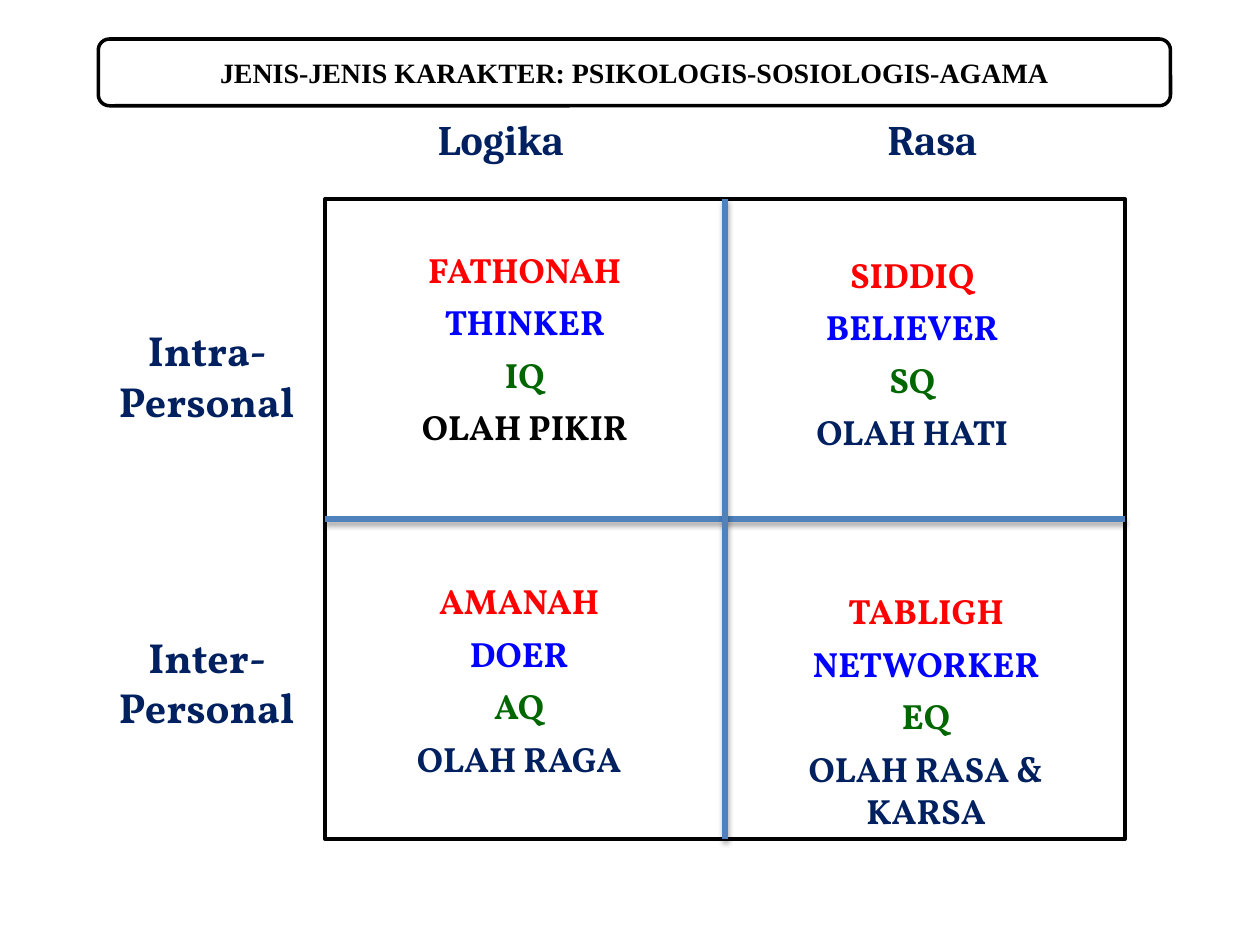
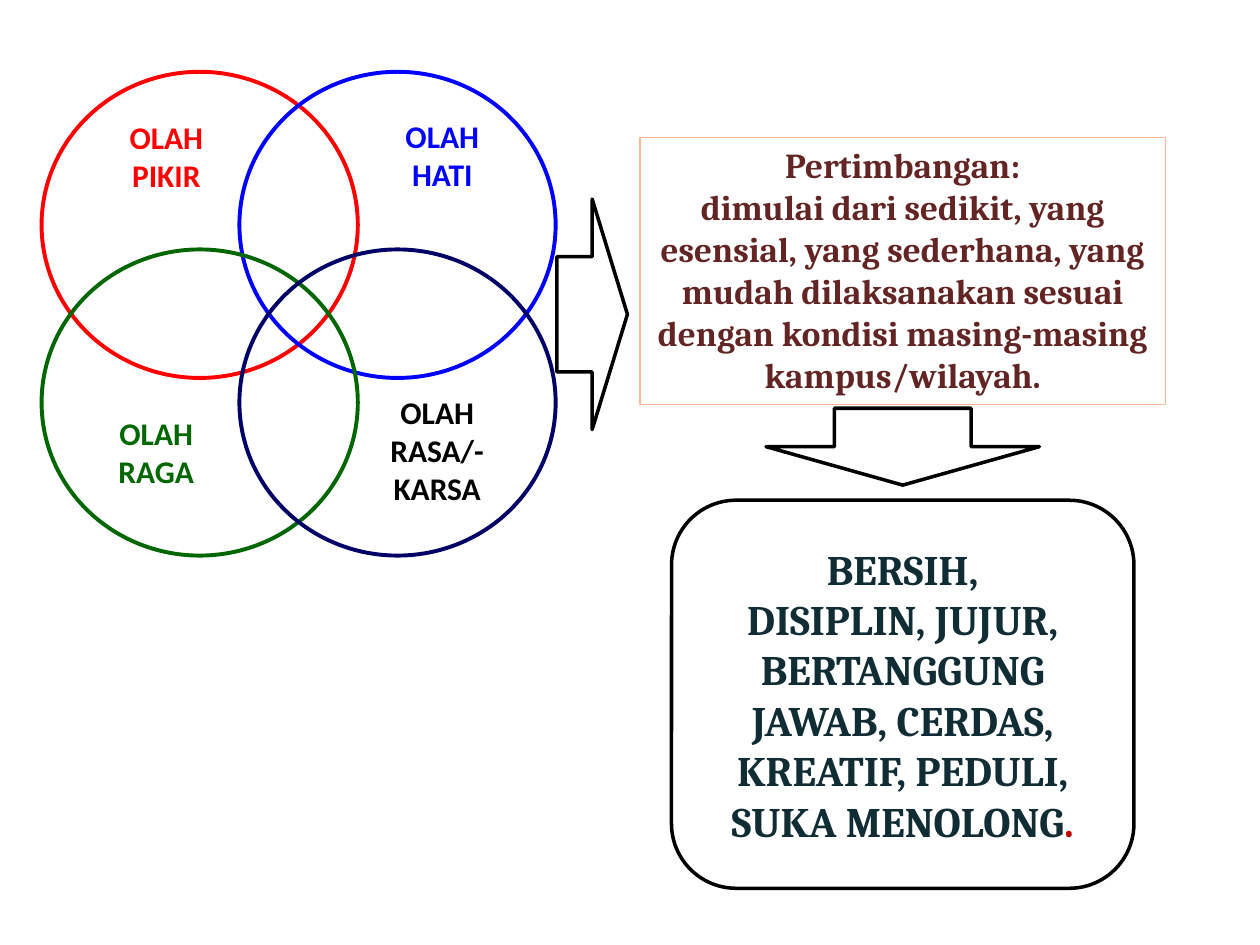
from lxml import etree
from pptx import Presentation
from pptx.dml.color import RGBColor
from pptx.enum.shapes import MSO_CONNECTOR, MSO_SHAPE
from pptx.enum.text import MSO_ANCHOR, PP_ALIGN
from pptx.oxml import parse_xml
from pptx.oxml.ns import nsdecls
from pptx.util import Inches, Pt

WHITE = RGBColor(0xFF, 0xFF, 0xFF)
BLACK = RGBColor(0x00, 0x00, 0x00)
RED = RGBColor(0xFF, 0x00, 0x00)
BLUE = RGBColor(0x00, 0x00, 0xFF)
GREEN = RGBColor(0x00, 0x66, 0x00)
NAVY = RGBColor(0x00, 0x20, 0x60)
DARK_BLUE = RGBColor(0x00, 0x00, 0x66)
STEEL = RGBColor(0x4F, 0x81, 0xBD)
PEACH = RGBColor(0xFF, 0xB7, 0x93)
MAROON = RGBColor(0x63, 0x25, 0x23)
TEAL = RGBColor(0x10, 0x2C, 0x34)
DARK_RED = RGBColor(0xC0, 0x00, 0x00)

DIVIDER_SHADOW = f"""<a:effectLst {nsdecls("a")}>
  <a:outerShdw blurRad="{Pt(3.1)}" dist="{Pt(1.8)}" dir="5400000" rotWithShape="0">
    <a:srgbClr val="000000"><a:alpha val="35000"/></a:srgbClr>
  </a:outerShdw>
</a:effectLst>"""


def add_outline(shapes, kind, box, color=BLACK, weight=2, fill=None):
    shape = shapes.add_shape(kind, *map(Inches, box))
    shape.shadow.inherit = False
    shape.line.color.rgb = color
    shape.line.width = Pt(weight)
    if fill is None:
        shape.fill.background()
    else:
        shape.fill.solid()
        shape.fill.fore_color.rgb = fill
    return shape


def write(shape, lines, font_name, size, anchor=MSO_ANCHOR.TOP, space_after=0):
    """Fill a shape with centred bold paragraphs given as (text, color)."""
    frame = shape.text_frame
    frame.word_wrap = True
    frame.vertical_anchor = anchor
    for index, (text, color) in enumerate(lines):
        paragraph = frame.add_paragraph() if index else frame.paragraphs[0]
        paragraph.text = text
        paragraph.alignment = PP_ALIGN.CENTER
        paragraph.space_after = Pt(space_after)
        paragraph.font.name = font_name
        paragraph.font.size = Pt(size)
        paragraph.font.bold = True
        paragraph.font.color.rgb = color


presentation = Presentation()
presentation.slide_width = Inches(10)
presentation.slide_height = Inches(7.5)
TITLE_ONLY, BLANK = presentation.slide_layouts[5], presentation.slide_layouts[6]

# Slide 1: character matrix
slide = presentation.slides.add_slide(TITLE_ONLY)
shapes = slide.shapes

# Framed title
title_box = (0.78, 0.31, 8.51, 0.53)
add_outline(shapes, MSO_SHAPE.ROUNDED_RECTANGLE, title_box)
title = shapes.title
title.left, title.top, title.width, title.height = map(Inches, title_box)
write(title, [("JENIS-JENIS KARAKTER: PSIKOLOGIS-SOSIOLOGIS-AGAMA", BLACK)],
      "Times New Roman", 16, MSO_ANCHOR.MIDDLE)

# Matrix frame with its two dividers
matrix = add_outline(shapes, MSO_SHAPE.RECTANGLE, (2.58, 1.58, 6.35, 5.08), fill=WHITE)
for start_side, end_side in ((1, 3), (0, 2)):
    divider = shapes.add_connector(MSO_CONNECTOR.STRAIGHT, 0, 0, 0, 0)
    divider.begin_connect(matrix, start_side)
    divider.end_connect(matrix, end_side)
    divider.line.color.rgb = STEEL
    divider.line.width = Pt(3)
    divider._element.spPr.append(parse_xml(DIVIDER_SHADOW))

# Row and column headings
headings = [
    ("Intra- Personal", "Vollkorn", (0.78, 2.53, 1.72, 0.91)),
    ("Inter- Personal", "Vollkorn", (0.78, 4.96, 1.72, 0.91)),
    ("Logika", "Cambria", (3, 0.85, 1.95, 0.51)),
    ("Rasa", "Cambria", (6.29, 0.85, 2.22, 0.51)),
]
for text, font_name, box in headings:
    write(shapes.add_textbox(*map(Inches, box)), [(text, NAVY)], font_name, 24)

# Quadrants: trait, type, quotient and practice
quadrants = [
    ((2.75, 1.92, 2.83, 1.7), ("FATHONAH", "THINKER", "IQ", "OLAH PIKIR"), BLACK),
    ((6, 1.96, 2.48, 2.12), ("SIDDIQ", "BELIEVER", "SQ", "OLAH HATI"), NAVY),
    ((2.83, 4.55, 2.58, 2.12), ("AMANAH", "DOER", "AQ", "OLAH RAGA"), NAVY),
    ((5.85, 4.63, 3, 2.12), ("TABLIGH", "NETWORKER", "EQ", "OLAH RASA & KARSA"), NAVY),
]
for box, words, practice_color in quadrants:
    lines = zip(words, (RED, BLUE, GREEN, practice_color))
    write(shapes.add_textbox(*map(Inches, box)), lines, "Vollkorn", 20, space_after=6)

# Slide 2: from four practices to core values
slide = presentation.slides.add_slide(BLANK)
shapes = slide.shapes

# Overlapping circles and their labels
circles = shapes.add_group_shape().shapes
for index, color in enumerate((RED, BLUE, GREEN, DARK_BLUE)):
    row, column = divmod(index, 2)
    box = (0.33 + 1.57 * column, 0.57 + 1.41 * row, 2.51, 2.43)
    add_outline(circles, MSO_SHAPE.OVAL, box, color, 2.25)

labels = [
    ("OLAH PIKIR", RED, (0.81, 0.89, 1.02, 0.71)),
    ("OLAH HATI", BLUE, (3, 0.88, 1.02, 0.71)),
    ("OLAH RAGA", GREEN, (0.73, 3.24, 1.02, 0.71)),
    ("OLAH RASA/-KARSA", BLACK, (2.92, 3.07, 1.1, 1.01)),
]
for text, color, box in labels:
    write(circles.add_textbox(*map(Inches, box)), [(text, color)], "Calibri", 18)

# Arrows
add_outline(shapes, MSO_SHAPE.RIGHT_ARROW, (4.42, 1.58, 0.56, 1.83), fill=WHITE)
add_outline(shapes, MSO_SHAPE.DOWN_ARROW, (6.08, 3.24, 2.17, 0.61), fill=WHITE)

# Considerations
considerations = add_outline(shapes, MSO_SHAPE.RECTANGLE, (5.08, 1.09, 4.17, 2.12), PEACH, 0.75)
write(considerations, [
    ("Pertimbangan:", MAROON),
    ("dimulai dari sedikit, yang esensial, yang sederhana, yang mudah dilaksanakan "
     "sesuai dengan kondisi masing-masing kampus/wilayah.", MAROON),
], "Cambria", 20)

# Core values, closed by a red full stop
values = add_outline(shapes, MSO_SHAPE.ROUNDED_RECTANGLE, (5.33, 3.97, 3.67, 3.08), fill=WHITE)
write(values, [
    ("BERSIH,", TEAL),
    ("DISIPLIN, JUJUR, BERTANGGUNG JAWAB, CERDAS, KREATIF, PEDULI, SUKA MENOLONG", TEAL),
], "Cambria", 24, MSO_ANCHOR.MIDDLE)
full_stop = values.text_frame.paragraphs[-1].add_run()
full_stop.text = "."
full_stop.font.color.rgb = DARK_RED

presentation.save("out.pptx")
